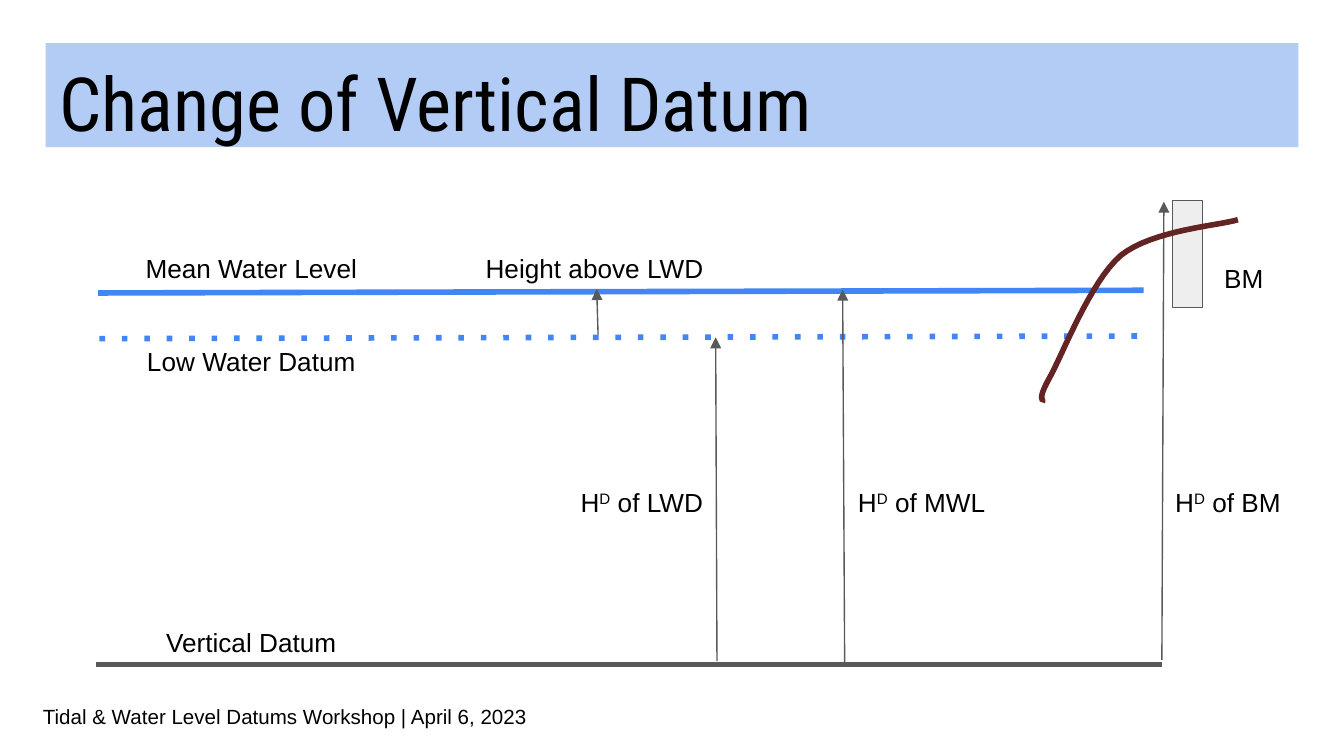
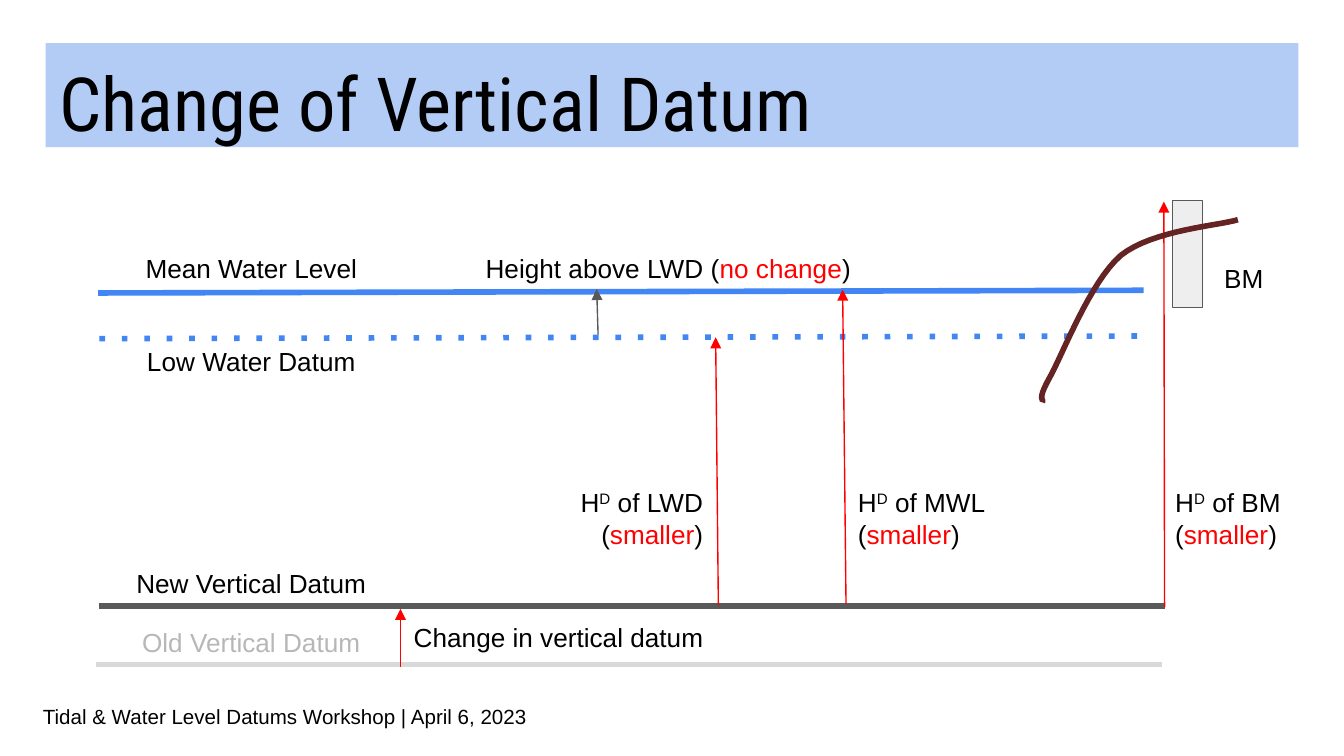
from lxml import etree
from pptx import Presentation
from pptx.dml.color import RGBColor
from pptx.enum.shapes import MSO_CONNECTOR, MSO_SHAPE
from pptx.enum.text import MSO_ANCHOR, MSO_AUTO_SIZE, PP_ALIGN
from pptx.oxml.ns import qn
from pptx.util import Pt

PX = 4572
INSET = 20 * PX
STRAIGHT = MSO_CONNECTOR.STRAIGHT
RECTANGLE = MSO_SHAPE.RECTANGLE
TOP, FIT, NO_FIT = MSO_ANCHOR.TOP, MSO_AUTO_SIZE.SHAPE_TO_FIT_TEXT, MSO_AUTO_SIZE.NONE
LEFT, CENTER, RIGHT = PP_ALIGN.LEFT, PP_ALIGN.CENTER, PP_ALIGN.RIGHT

BLACK = RGBColor(0x00, 0x00, 0x00)
RED = RGBColor(0xFF, 0x00, 0x00)
GRAY = RGBColor(0x59, 0x59, 0x59)
FADED_LINE = RGBColor(0xD9, 0xD9, 0xD9)
FADED_TEXT = RGBColor(0xB7, 0xB7, 0xB7)
PALE = RGBColor(0xEE, 0xEE, 0xEE)
BAND_BLUE = RGBColor(0x4A, 0x86, 0xE8)
WATER_BLUE = RGBColor(0x42, 0x85, 0xF4)
SHORE_BROWN = RGBColor(0x63, 0x24, 0x23)

SHORE_START = (1842, 327)
SHORE_CURVES = [
    [(1814, 336), (1716, 342), (1668, 380)],
    [(1622, 420), (1582, 526), (1562, 562)],
    [(1542, 598), (1554, 592), (1551, 599)],
]
CURVE_STEPS = 16

SMALLER = [("(", None), ("smaller", "red"), (")", None)]
HEIGHT = "Height above LWD"
SHARED_LABELS = [
    (195, 356, 358, CENTER, "Mean Water Level"),
    (195, 494, 358, CENTER, "Low Water Datum"),
    (1802, 370, 100, LEFT, "BM"),
]
DATUM_HEIGHTS = [
    ("LWD", 824, RIGHT),
    ("MWL", 1257, LEFT),
    ("BM", 1729, LEFT),
]
PAGES = [
    {
        "datum_lines": [(143, 989, 1729, 989, GRAY)],
        "arrows": [(1729, 982, 1732, 300), (1067, 984, 1065, 502), (1257, 985, 1254, 431)],
        "arrow_color": GRAY,
        "height_width": 374,
        "height_spans": [(HEIGHT, None)],
        "height_notes": [],
        "labels": [(187, 912, 374, CENTER, "Vertical Datum", BLACK)],
    },
    {
        "datum_lines": [(143, 989, 1729, 989, FADED_LINE), (148, 902, 1733, 902, GRAY)],
        "arrows": [(1733, 903, 1732, 300), (1069, 901, 1065, 502), (1259, 899, 1254, 431),
                   (596, 992, 596, 906)],
        "arrow_color": RED,
        "height_width": 632,
        "height_spans": [(HEIGHT + " (", None), ("no change", "red"), (")", None)],
        "height_notes": [SMALLER],
        "labels": [
            (187, 912, 374, CENTER, "Old Vertical Datum", FADED_TEXT),
            (182, 825, 384, CENTER, "New Vertical Datum", BLACK),
            (596, 905, 488, LEFT, "Change in vertical datum", BLACK),
        ],
    },
]


def draw_line(page, ends, color, width, dash=None, arrow=False):
    line = page.shapes.add_connector(STRAIGHT, *[PX * value for value in ends])
    line.line.color.rgb = color
    line.line.width = Pt(width)
    properties = line._element.spPr
    outline = properties.find(qn("a:ln"))
    if dash:
        etree.SubElement(outline, qn("a:prstDash")).set("val", dash)
    if arrow:
        etree.SubElement(outline, qn("a:tailEnd")).set("type", "triangle")
    etree.SubElement(properties, qn("a:effectLst"))


def write_label(page, left, top, width, align, lines, color=BLACK, size=14):
    height = 40 + round(size * 3.4) * len(lines)
    box = page.shapes.add_textbox(left * PX, top * PX, width * PX, height * PX)
    frame = box.text_frame
    frame.word_wrap = True
    frame.auto_size = FIT
    frame.margin_left = frame.margin_right = frame.margin_top = frame.margin_bottom = INSET
    for number, spans in enumerate(lines):
        para = frame.paragraphs[0] if number == 0 else frame.add_paragraph()
        para.alignment = align
        para.font.name = "Arial"
        para.font.size = Pt(size)
        para.font.color.rgb = color
        for text, style in spans:
            span = para.add_run()
            span.text = text
            if style == "red":
                span.font.color.rgb = RED
            elif style == "super":
                span.font._element.set("baseline", "30000")


shore_points = []
start = SHORE_START
for first, second, end in SHORE_CURVES:
    for step in range(1, CURVE_STEPS + 1):
        t = step / CURVE_STEPS
        shore_points.append([
            PX * ((1 - t) ** 3 * a + 3 * t * (1 - t) ** 2 * b + 3 * t ** 2 * (1 - t) * c + t ** 3 * d)
            for a, b, c, d in zip(start, first, second, end)
        ])
    start = end

deck = Presentation()
deck.slide_width = 2000 * PX
deck.slide_height = 1125 * PX

for content in PAGES:
    page = deck.slides.add_slide(deck.slide_layouts[5])

    title = page.shapes.title
    title.left, title.top, title.width, title.height = 68 * PX, 64 * PX, 1864 * PX, 155 * PX
    title.fill.solid()
    title.fill.fore_color.rgb = BAND_BLUE
    band_color = title._element.spPr.find(".//" + qn("a:srgbClr"))
    etree.SubElement(band_color, qn("a:alpha")).set("val", "42000")
    frame = title.text_frame
    frame.text = "Change of Vertical Datum"
    frame.auto_size = NO_FIT
    frame.vertical_anchor = TOP
    frame.margin_left = frame.margin_right = frame.margin_top = frame.margin_bottom = INSET
    para = frame.paragraphs[0]
    para.alignment = LEFT
    para.font.name = "Roboto Condensed"
    para.font.size = Pt(40)
    para.font.color.rgb = BLACK

    write_label(page, 44, 1029, 1082, LEFT,
                [[("Tidal & Water Level Datums Workshop | April 6, 2023", None)]], size=11)

    draw_line(page, (146, 436, 1702, 432), WATER_BLUE, 3)
    draw_line(page, (148, 504, 1700, 500), WATER_BLUE, 3, dash="dot")
    for *ends, color in content["datum_lines"]:
        draw_line(page, ends, color, 3)

    benchmark = page.shapes.add_shape(RECTANGLE, 1745 * PX, 298 * PX, 44 * PX, 160 * PX)
    benchmark.shadow.inherit = False
    benchmark.fill.solid()
    benchmark.fill.fore_color.rgb = PALE
    benchmark.line.color.rgb = GRAY
    benchmark.line.width = Pt(0.75)

    for ends in content["arrows"]:
        draw_line(page, ends, content["arrow_color"], 0.75, arrow=True)
    draw_line(page, (890, 498, 888, 430), GRAY, 0.75, arrow=True)

    outline = page.shapes.build_freeform(SHORE_START[0] * PX, SHORE_START[1] * PX)
    outline.add_line_segments(shore_points, close=False)
    shore = outline.convert_to_shape()
    shore.shadow.inherit = False
    shore.fill.background()
    shore.line.color.rgb = SHORE_BROWN
    shore.line.width = Pt(3)

    for left, top, width, align, text in SHARED_LABELS:
        write_label(page, left, top, width, align, [[(text, None)]])
    write_label(page, 703, 356, content["height_width"], LEFT, [content["height_spans"]])
    for name, left, align in DATUM_HEIGHTS:
        height_name = [("H", None), ("D", "super"), (" of " + name, None)]
        write_label(page, left, 704, 242, align, [height_name] + content["height_notes"])
    for left, top, width, align, text, color in content["labels"]:
        write_label(page, left, top, width, align, [[(text, None)]], color)

deck.save("out.pptx")
